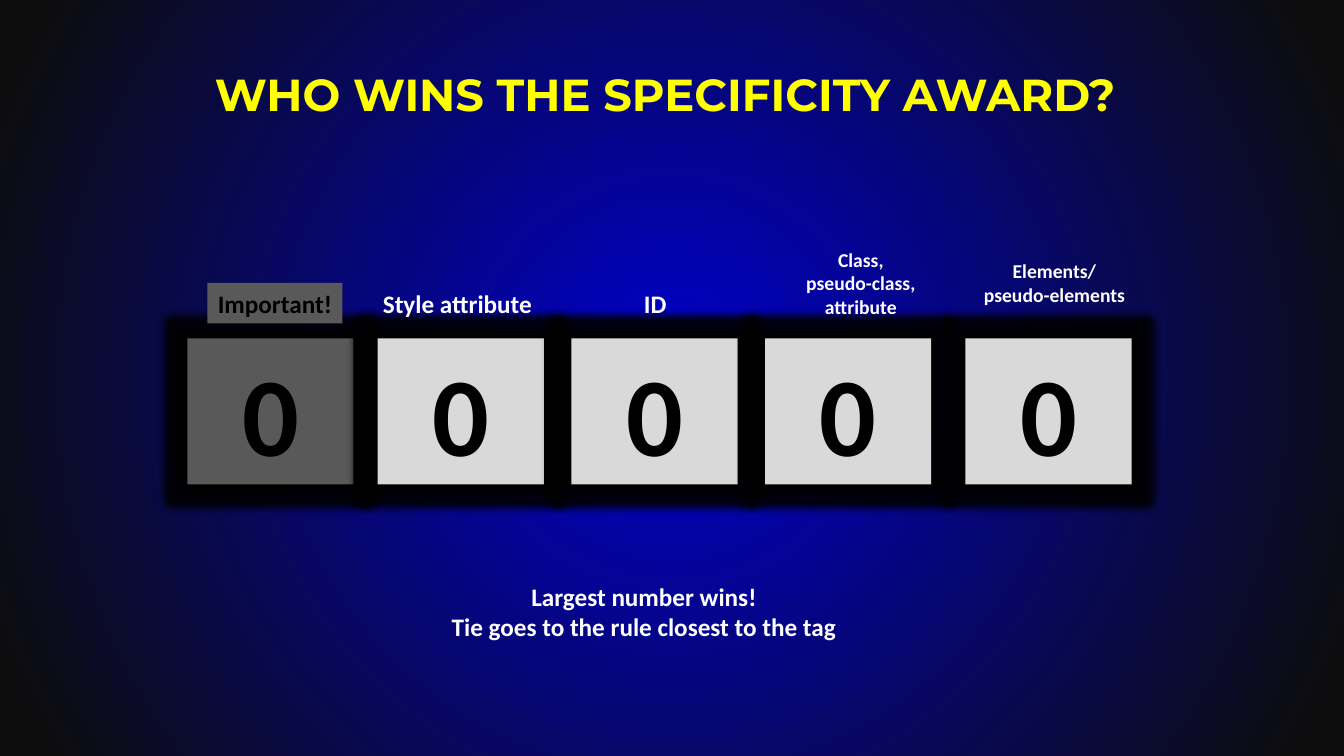
from lxml import etree
from pptx import Presentation
from pptx import util as u
from pptx.dml.color import RGBColor
from pptx.enum import shapes, text
from pptx.oxml import parse_xml
from pptx.oxml.ns import nsdecls, qn

BLUE, NEAR_BLACK = "0000CC", "0D0D0D"
DARK_GRAY, LIGHT_GRAY = "595959", "D9D9D9"
BLACK, WHITE, YELLOW = "000000", "FFFFFF", "FFFF00"

COUNTER_TOP, COUNTER_WIDTH, COUNTER_HEIGHT = 8.53, 4.19, 3.68

# Left edge, label lines, label box relative to the counter, label size, wrap
COUNTERS = [
    (4.72, ["Important!"], (0.51, -1.4, 3.4, 1.02), 18, False),
    (9.52, ["Style attribute"], (-0.15, -1.4, 4.32, 1.02), 18, False),
    (14.4, ["ID"], (1.57, -1.4, 1.09, 1.02), 18, False),
    (19.28, ["Class, pseudo-class, attribute"], (0.74, -2.41, 3.35, 2.06), 14, True),
    (24.33, ["Elements/", "pseudo-elements"], (0.2, -2.13, 4.09, 1.45), 14, False),
]


def color(hex_value):
    return RGBColor.from_string(hex_value)


def write_lines(shape, lines, size, hex_value, font_name="Calibri", wrap=True):
    frame = shape.text_frame
    frame.word_wrap = wrap
    for index, line in enumerate(lines):
        paragraph = frame.add_paragraph() if index else frame.paragraphs[0]
        paragraph.alignment = text.PP_ALIGN.CENTER
        run = paragraph.add_run()
        run.text = line
        run.font.name = font_name
        run.font.size = u.Pt(size)
        run.font.bold = True
        run.font.color.rgb = color(hex_value)


def add_text(slide, box, lines, size, hex_value, wrap=False):
    shape = slide.shapes.add_textbox(*map(u.Cm, box))
    write_lines(shape, lines, size, hex_value, wrap=wrap)
    shape.text_frame.auto_size = text.MSO_AUTO_SIZE.SHAPE_TO_FIT_TEXT
    return shape


def set_fill(shape, hex_value):
    shape.fill.solid()
    shape.fill.fore_color.rgb = color(hex_value)


def add_glow(shape):
    shape.shadow.inherit = False
    effects = shape._element.spPr.find(qn("a:effectLst"))
    effects.append(parse_xml(
        f'<a:glow {nsdecls("a")} rad="{u.Pt(11)}"><a:srgbClr val="{BLACK}">'
        '<a:alpha val="90000"/></a:srgbClr></a:glow>'))


def set_background(slide):
    fill = slide.background.fill
    fill.gradient()
    for stop, hex_value, position in zip(
            fill.gradient_stops, (BLUE, NEAR_BLACK), (0, 0.95)):
        stop.color.rgb = color(hex_value)
        stop.position = position
    # Radial gradient from the slide centre
    gradient = slide._element.find(".//" + qn("a:gradFill"))
    gradient.remove(gradient.find(qn("a:lin")))
    radial = etree.SubElement(gradient, qn("a:path"), {"path": "circle"})
    etree.SubElement(radial, qn("a:fillToRect"),
                     {side: "50000" for side in "ltrb"})


def add_title(slide, box):
    title = slide.shapes.title
    title.left, title.top, title.width, title.height = map(u.Cm, box)
    write_lines(title, ["WHO WINS THE SPECIFICITY AWARD? "], 32, YELLOW, "Montserrat")
    title.text_frame.auto_size = text.MSO_AUTO_SIZE.NONE
    title.text_frame.vertical_anchor = text.MSO_ANCHOR.MIDDLE


def add_counter(slide, box, lines, label_box, label_size, wrap, disabled):
    # Digit
    left, top = box[:2]
    counter = slide.shapes.add_shape(shapes.MSO_SHAPE.RECTANGLE, *map(u.Cm, box))
    set_fill(counter, DARK_GRAY if disabled else LIGHT_GRAY)
    counter.line.fill.background()
    add_glow(counter)
    write_lines(counter, ["0"], 80, BLACK)
    counter.text_frame.auto_size = text.MSO_AUTO_SIZE.SHAPE_TO_FIT_TEXT
    # Label above it
    dx, dy, width, height = label_box
    label = add_text(slide, (left + dx, top + dy, width, height), lines,
                     label_size, BLACK if disabled else WHITE, wrap)
    if disabled:
        set_fill(label, DARK_GRAY)


def main():
    presentation = Presentation()
    presentation.slide_width, presentation.slide_height = u.Cm(33.87), u.Cm(19.05)
    slide = presentation.slides.add_slide(presentation.slide_layouts[5])
    set_background(slide)
    add_title(slide, (1.69, 0.76, 30.48, 3.18))
    for index, (left, *label) in enumerate(COUNTERS):
        box = (left, COUNTER_TOP, COUNTER_WIDTH, COUNTER_HEIGHT)
        add_counter(slide, box, *label, disabled=index == 0)
    # Rule for the winner
    add_text(slide, (11.1, 14.53, 10.26, 1.8),
             ["Largest number wins!", "Tie goes to the rule closest to the tag"],
             18, WHITE)
    presentation.save("out.pptx")


if __name__ == "__main__":
    main()
